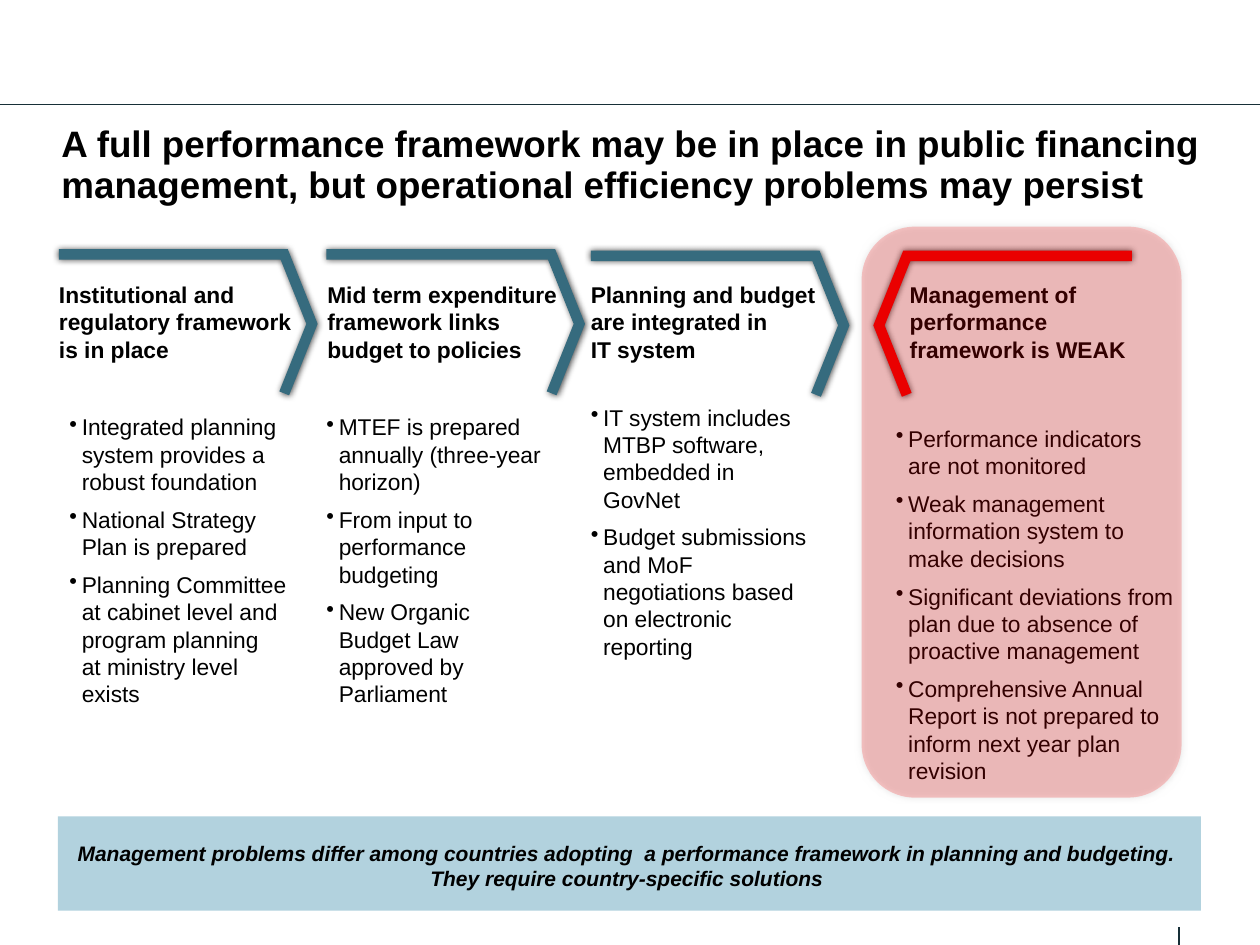
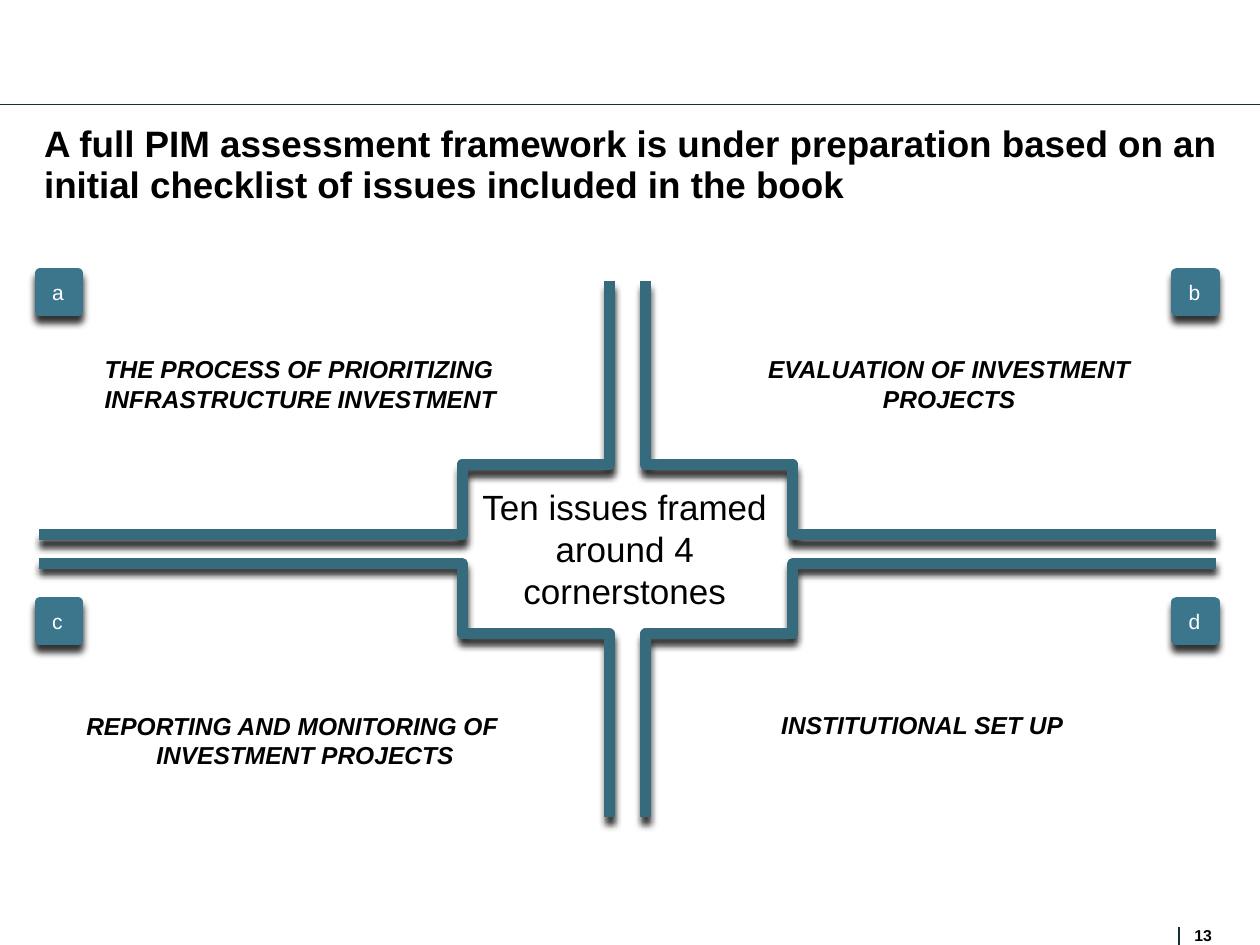
from itertools import product

from lxml.etree import SubElement
from pptx import Presentation
from pptx.dml.color import RGBColor
from pptx.enum.shapes import MSO_CONNECTOR as Connector, MSO_SHAPE as Shape
from pptx.enum.text import MSO_ANCHOR as Anchor, PP_ALIGN as Align
from pptx.oxml.ns import qn
from pptx.util import Cm, Pt

BLACK = RGBColor(0x00, 0x00, 0x00)
WHITE = RGBColor(0xFF, 0xFF, 0xFF)
RULE = RGBColor(0x17, 0x2F, 0x37)
TEAL = RGBColor(0x36, 0x6B, 0x7E)
BADGE = RGBColor(0x3C, 0x76, 0x8C)
PALE_BLUE = RGBColor(0xB2, 0xD2, 0xDE)
RED = RGBColor(0xFF, 0x00, 0x00)


def write(shape, lines, size, color=BLACK, bold=False, italic=False, align=Align.LEFT,
          bullets=False, anchor=Anchor.TOP, spacing=None, hanging=None):
    frame = shape.text_frame
    frame.word_wrap = True
    frame.vertical_anchor = anchor
    frame.margin_left = frame.margin_top = frame.margin_right = frame.margin_bottom = 0
    for index, line in enumerate(lines):
        para = frame.paragraphs[0] if index == 0 else frame.add_paragraph()
        para.text = line
        para.alignment = align
        para.line_spacing = spacing
        if bullets and index < len(lines) - 1:
            para.space_after = Pt(6)
        properties = para._p.get_or_add_pPr()
        if hanging:
            properties.set("marL", str(Cm(hanging)))
            properties.set("indent", str(-Cm(hanging)))
        if bullets:
            SubElement(properties, qn("a:buChar"), char="•")
        para.font.name = "Arial"
        para.font.size = Pt(size)
        para.font.bold = bold
        para.font.italic = italic
        para.font.color.rgb = color


def add_path(page, points, color, width, join):
    corners = [(Cm(x), Cm(y)) for x, y in points]
    builder = page.shapes.build_freeform(*corners[0])
    builder.add_line_segments(corners[1:], close=False)
    path = builder.convert_to_shape()
    path.fill.background()
    path.line.color.rgb = color
    path.line.width = Pt(width)
    SubElement(path.line._get_or_add_ln(), qn(join))
    return path


deck = Presentation()
deck.slide_width, deck.slide_height = Cm(25.4), Cm(19.05)
titles = [
    (1.24, "A full performance framework may be in place in public financing management, "
           "but operational efficiency problems may persist"),
    (0.89, "A full PIM assessment framework is under preparation based on "
           "an initial checklist of issues included in the book"),
]
for left, title in titles:
    page = deck.slides.add_slide(deck.slide_layouts[6])
    for ends in [(23.77, 18.69, 23.77, 19.05), (0, 2.11, 25.4, 2.11)]:
        rule = page.shapes.add_connector(Connector.STRAIGHT, *map(Cm, ends))
        rule.line.color.rgb = RULE
        rule.line.width = Pt(0.75)
        SubElement(rule._element.spPr, qn("a:effectLst"))
    box = page.shapes.add_textbox(Cm(left), Cm(2.51), Cm(23.65), Cm(2.29))
    write(box, [title], 21, bold=True, spacing=0.93)

framework, cornerstones = deck.slides
shadows = []

arrows = [(1.19, 5.13, 1, TEAL), (6.58, 5.13, 1, TEAL),
          (11.91, 5.16, 1, TEAL), (22.82, 5.16, -1, RED)]
for left, top, direction, color in arrows:
    points = [(left + direction * x, top + y)
              for x, y in [(0, 0), (4.54, 0), (5.1, 1.4), (4.54, 2.8)]]
    arrow = add_path(framework, points, color, 6, "a:miter")
    shadows.append((arrow, 73, 0))

headings = [
    (1.19, 4.75, ["Institutional and regulatory framework is in place"]),
    (6.6, 4.95, ["Mid term expenditure framework links", "budget to policies"]),
    (11.91, 5.13, ["Planning and budget", "are integrated in", "IT system"]),
    (18.34, 4.5, ["Management of performance framework is WEAK"]),
]
for left, width, lines in headings:
    box = framework.shapes.add_textbox(Cm(left), Cm(5.66), Cm(width), Cm(1.68))
    write(box, lines, 13, bold=True)

findings = [
    (1.4, 8.33, 4.42, 5.99, [
        "Integrated planning system provides a robust foundation",
        "National Strategy Plan is prepared",
        "Planning Committee at cabinet level and program planning\vat ministry level exists"]),
    (6.58, 8.33, 4.42, 5.99, [
        "MTEF is prepared annually (three-year horizon)",
        "From input to performance budgeting",
        "New Organic Budget Law approved by Parliament"]),
    (11.91, 8.13, 4.42, 6.32, [
        "IT system includes MTBP software, embedded in GovNet",
        "Budget submissions and MoF negotiations based on electronic reporting"]),
    (18.06, 8.56, 5.69, 7.32, [
        "Performance indicators are not monitored",
        "Weak management information system to make decisions",
        "Significant deviations from plan due to absence of proactive management",
        "Comprehensive Annual Report is not prepared to inform next year plan revision"]),
]
for left, top, width, height, lines in findings:
    box = framework.shapes.add_textbox(Cm(left), Cm(top), Cm(width), Cm(height))
    write(box, lines, 13, bullets=True, hanging=0.25)

banner = framework.shapes.add_shape(Shape.RECTANGLE, Cm(1.17), Cm(16.46), Cm(23.04), Cm(1.9))
banner.shadow.inherit = False
banner.fill.solid()
banner.fill.fore_color.rgb = PALE_BLUE
banner.line.fill.background()
box = framework.shapes.add_textbox(Cm(1.35), Cm(16.94), Cm(22.58), Cm(1.02))
write(box, ["Management problems differ among countries adopting  a performance framework in "
            "planning and budgeting. They require country-specific solutions"],
      12, bold=True, italic=True, align=Align.CENTER)

highlight = framework.shapes.add_shape(
    Shape.ROUNDED_RECTANGLE, Cm(17.37), Cm(4.57), Cm(6.45), Cm(11.51))
highlight.fill.solid()
highlight.fill.fore_color.rgb = RED
highlight_color = highlight._element.spPr.find(qn("a:solidFill"))[0]
SubElement(highlight_color, qn("a:alpha"), val="20000")
highlight.line.fill.background()
shadows.append((highlight, 50, 0))

box = cornerstones.shapes.add_textbox(Cm(24.08), Cm(18.67), Cm(0.5), Cm(0.36))
write(box, ["13"], 9, bold=True)

center_x, center_y = 12.65, 11.07
for down, right in product((-1, 1), repeat=2):
    points = [(center_x + right * x, center_y + down * y)
              for x, y in [(11.86, 0.29), (8.4 - 5.07, 0.29), (3.33, 1.71),
                           (0.37, 1.71), (0.37, 5.41)]]
    bracket = add_path(cornerstones, points, TEAL, 6.25, "a:round")
    shadows.append((bracket, 80, 4))

box = cornerstones.shapes.add_textbox(Cm(9.7), Cm(9.78), Cm(5.79), Cm(2.57))
write(box, ["Ten issues framed around 4 cornerstones"], 20,
      align=Align.CENTER, anchor=Anchor.MIDDLE)

labels = [
    (2.11, 7.14, 8.79, Align.LEFT, None, "THE PROCESS OF PRIORITIZING INFRASTRUCTURE INVESTMENT"),
    (15.16, 7.14, 7.95, Align.CENTER, None, "EVALUATION OF INVESTMENT PROJECTS"),
    (1.04, 14.33, 9.7, Align.CENTER, 0.52, "REPORTING AND MONITORING OF INVESTMENT PROJECTS"),
    (15.75, 14.31, 6.55, Align.LEFT, None, "INSTITUTIONAL SET UP"),
]
for left, top, width, align, hanging, label in labels:
    box = cornerstones.shapes.add_textbox(Cm(left), Cm(top), Cm(width), Cm(1.19))
    write(box, [label], 14, bold=True, italic=True, align=align, hanging=hanging)

for letter, (top, left) in zip("abcd", product((5.51, 12.14), (0.81, 23.72))):
    badge = cornerstones.shapes.add_shape(
        Shape.RECTANGLE, Cm(left), Cm(top), Cm(0.76), Cm(0.76))
    badge.fill.solid()
    badge.fill.fore_color.rgb = BADGE
    badge.line.color.rgb = BADGE
    badge.line.width = Pt(6.25)
    write(badge, [letter], 12, WHITE, anchor=Anchor.MIDDLE)
    badge.text_frame.margin_left = Cm(0.24)
    shadows.append((badge, 80, 4))

for shape, opacity, distance in shadows:
    shape.shadow.inherit = False
    effects = shape._element.spPr.find(qn("a:effectLst"))
    shadow = SubElement(effects, qn("a:outerShdw"), blurRad=str(Pt(4)),
                        dist=str(Pt(distance)), dir="5400000", rotWithShape="0")
    shade = SubElement(shadow, qn("a:srgbClr"), val=str(BLACK))
    SubElement(shade, qn("a:alpha"), val=str(opacity * 1000))

deck.save("out.pptx")
